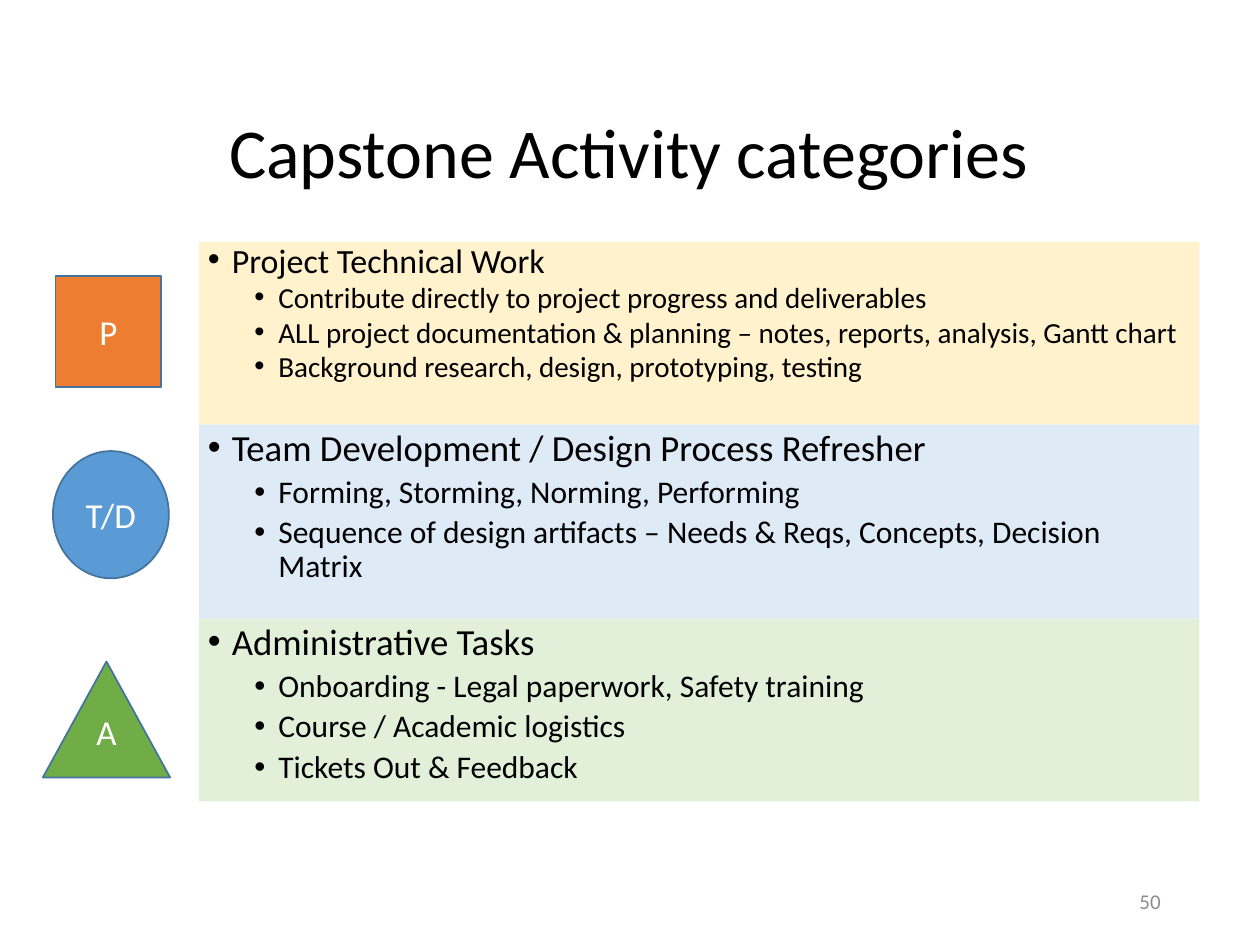
from lxml import etree
from pptx import Presentation
from pptx.dml.color import RGBColor
from pptx.enum.shapes import MSO_SHAPE
from pptx.enum.text import MSO_ANCHOR, PP_ALIGN
from pptx.oxml.ns import qn
from pptx.util import Inches, Pt

RECTANGLE, OVAL = MSO_SHAPE.RECTANGLE, MSO_SHAPE.OVAL
TRIANGLE = MSO_SHAPE.ISOSCELES_TRIANGLE
TOP, MIDDLE = MSO_ANCHOR.TOP, MSO_ANCHOR.MIDDLE
LEFT, CENTER, RIGHT = PP_ALIGN.LEFT, PP_ALIGN.CENTER, PP_ALIGN.RIGHT

BLACK = RGBColor(0x00, 0x00, 0x00)
WHITE = RGBColor(0xFF, 0xFF, 0xFF)
GRAY = RGBColor(0x8C, 0x8C, 0x8C)
CREAM = RGBColor(0xFF, 0xF2, 0xCC)
PALE_BLUE = RGBColor(0xDE, 0xEB, 0xF7)
PALE_GREEN = RGBColor(0xE2, 0xF0, 0xD9)
ORANGE = RGBColor(0xED, 0x7D, 0x31)
BLUE = RGBColor(0x5B, 0x9B, 0xD5)
GREEN = RGBColor(0x70, 0xAD, 0x47)
OUTLINE = RGBColor(0x43, 0x73, 0x9E)

BAND_LEFT, BAND_TOP, BAND_WIDTH = 1.58, 1.92, 7.94
BULLET_HANG = 0.19


def write(paragraph, text, size, color, **layout):
    """Add one styled run and apply the paragraph settings."""
    run = paragraph.add_run()
    run.text = text
    run.font.name = "Calibri"
    run.font.size = Pt(size)
    run.font.color.rgb = color
    for setting, value in layout.items():
        setattr(paragraph, setting, value)


def set_frame(shape, **settings):
    """Turn on wrapping, apply frame settings and return the frame."""
    frame = shape.text_frame
    frame.word_wrap = True
    for setting, value in settings.items():
        setattr(frame, setting, value)
    return frame


prs = Presentation()
prs.slide_width, prs.slide_height = Inches(10), Inches(7.5)
slide = prs.slides.add_slide(prs.slide_layouts[6])

# Title and slide number
labels = [
    ((0.68, 0.69, 8.62, 1.09), "Capstone Activity categories", 40, BLACK,
     {"alignment": CENTER, "line_spacing": 0.9}),
    ((7.06, 6.95, 2.25, 0.4), "50", 12, GRAY, {"alignment": RIGHT}),
]
for box, text, size, color, layout in labels:
    label = slide.shapes.add_textbox(*map(Inches, box))
    frame = set_frame(label, vertical_anchor=MIDDLE)
    write(frame.paragraphs[0], text, size, color, **layout)

# Stacked category bands: height, fill, line spacing, (heading, item) sizes, lines
categories = [
    (1.45, CREAM, 0.8, (19.4, 16.6), [
        "Project Technical Work",
        "Contribute directly to project progress and deliverables",
        "ALL project documentation & planning – notes, reports, analysis, Gantt chart",
        "Background research, design, prototyping, testing"]),
    (1.54, PALE_BLUE, 0.9, (21, 18), [
        "Team Development / Design Process Refresher",
        "Forming, Storming, Norming, Performing",
        "Sequence of design artifacts – Needs & Reqs, Concepts, Decision Matrix"]),
    (1.45, PALE_GREEN, 0.9, (21, 18), [
        "Administrative Tasks",
        "Onboarding - Legal paperwork, Safety training",
        "Course / Academic logistics",
        "Tickets Out & Feedback"]),
]
band_top = BAND_TOP
for height, fill, spacing, sizes, lines in categories:
    band = slide.shapes.add_shape(
        RECTANGLE, *map(Inches, (BAND_LEFT, band_top, BAND_WIDTH, height)))
    band.shadow.inherit = False
    band.fill.solid()
    band.fill.fore_color.rgb = fill
    band.line.fill.background()
    frame = set_frame(band, vertical_anchor=TOP,
                      margin_left=Inches(0.07), margin_right=Inches(0.07),
                      margin_top=Inches(0.04), margin_bottom=Inches(0.04))
    for index, text in enumerate(lines):
        level = min(index, 1)
        paragraph = frame.add_paragraph() if index else frame.paragraphs[0]
        write(paragraph, text, sizes[level], BLACK, alignment=LEFT, level=level,
              line_spacing=spacing, space_before=Pt((7.5, 3.8)[level]))
        properties = paragraph._p.get_or_add_pPr()
        properties.set("marL", str(Inches((0.19, 0.56)[level])))
        properties.set("indent", str(-Inches(BULLET_HANG)))
        etree.SubElement(properties, qn("a:buFont"), typeface="Arial")
        etree.SubElement(properties, qn("a:buChar"), char="•")
    band_top += height

# Category symbols; the triangle's larger bottom margin lifts its letter
symbols = [
    (RECTANGLE, (0.44, 2.19, 0.84, 0.88), ORANGE, "P", 0.05),
    (OVAL, (0.42, 3.58, 0.92, 1.01), BLUE, "T/D", 0.05),
    (TRIANGLE, (0.34, 5.25, 1.01, 0.92), GREEN, "A", 0.32),
]
for outline, box, fill, letter, bottom in symbols:
    symbol = slide.shapes.add_shape(outline, *map(Inches, box))
    symbol.shadow.inherit = False
    symbol.fill.solid()
    symbol.fill.fore_color.rgb = fill
    symbol.line.color.rgb = OUTLINE
    symbol.line.width = Pt(1)
    frame = set_frame(symbol, vertical_anchor=MIDDLE, margin_left=0,
                      margin_right=0, margin_bottom=Inches(bottom))
    write(frame.paragraphs[0], letter, 20, WHITE, alignment=CENTER)

prs.save("out.pptx")
